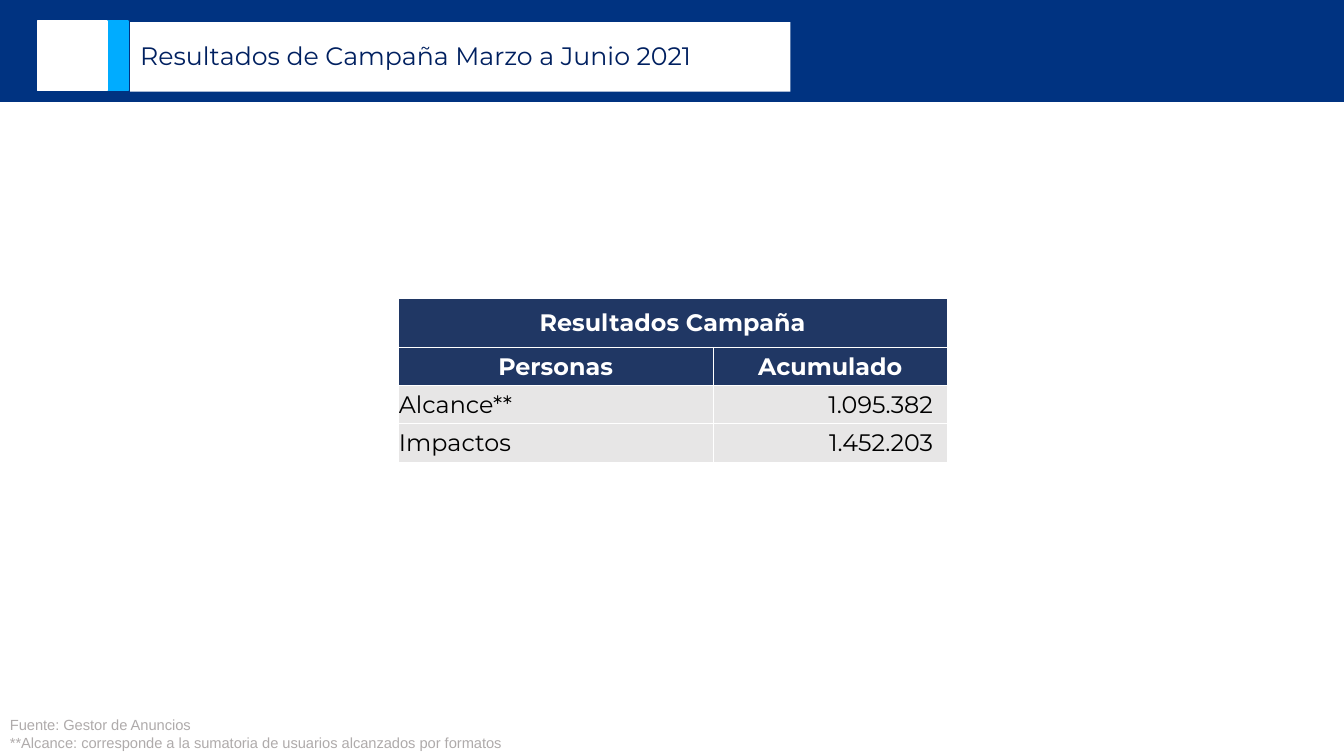
from dataclasses import dataclass
from typing import Any

from lxml.etree import SubElement
from pptx import Presentation
from pptx.dml.color import RGBColor
from pptx.enum.shapes import MSO_SHAPE as Shape
from pptx.enum.text import MSO_ANCHOR as Anchor, MSO_AUTO_SIZE as AutoSize, PP_ALIGN as Align
from pptx.oxml.ns import qn
from pptx.util import Emu, Inches, Pt

COLOURS = {
    "band": "003381", "accent": "00ACFF", "white": "FFFFFF", "title": "002060",
    "header": "203764", "body": "E7E6E6", "black": "000000", "note": "AFABAB",
}
SLIDE_WIDTH, SLIDE_HEIGHT = Inches(13.33), Inches(7.5)


@dataclass(frozen=True)
class Area:
    """Place and size, in percent of the slide's width and height."""
    left: float
    top: float
    width: float
    height: float


@dataclass(frozen=True)
class Block:
    kind: Shape
    area: Area
    colour: str


@dataclass(frozen=True)
class TableCell:
    row: int
    column: int
    text: str
    style: str
    align: Align
    margins: tuple[float, float, float, float] = (0.01, 0.01, 0.01, 0)


BLOCKS = [
    Block(Shape.FLOWCHART_PROCESS, Area(0, 0, 100, 13.47), "band"),
    Block(Shape.RECTANGLE, Area(8.03, 2.8, 1.5, 9.2), "accent"),
    Block(Shape.RECTANGLE, Area(2.78, 2.8, 5.18, 9.2), "white"),
]
TITLE_AREA = Area(9.68, 2.93, 49.13, 9.2)
NOTE_AREA = Area(0, 94, 49.2, 6)
NOTES = [
    "Fuente: Gestor de Anuncios",
    "**Alcance: corresponde a la sumatoria de usuarios alcanzados por formatos",
]
COLUMNS = [23.48, 17.4]
ROWS = [6.27, 5.07, 5.07, 5.07]
TABLE_AREA = Area(29.6, 39.4, sum(COLUMNS), sum(ROWS))
NUMBER_MARGINS = (0.01, 0.01, 0.14, 0)
CELLS = [
    TableCell(0, 0, "Resultados Campaña", "header", Align.CENTER, (0.19, 0.1, 0.19, 0.1)),
    TableCell(1, 0, "Personas", "header", Align.CENTER),
    TableCell(1, 1, "Acumulado", "header", Align.CENTER),
    TableCell(2, 0, "Alcance**", "body", Align.LEFT),
    TableCell(2, 1, "1.095.382", "body", Align.RIGHT, NUMBER_MARGINS),
    TableCell(3, 0, "Impactos", "body", Align.LEFT),
    TableCell(3, 1, "1.452.203", "body", Align.RIGHT, NUMBER_MARGINS),
]
FONTS = {
    "title": {"name": "Montserrat", "size": Pt(18), "bold": False},
    "header": {"name": "Montserrat", "size": Pt(17), "bold": True},
    "body": {"name": "Montserrat", "size": Pt(17), "bold": False},
    "note": {"name": "Arial", "size": Pt(10.5), "bold": False},
}


def colour(name: str) -> RGBColor:
    return RGBColor.from_string(COLOURS[name])


def across(share: float) -> Emu:
    return Emu(round(SLIDE_WIDTH * share / 100))


def down(share: float) -> Emu:
    return Emu(round(SLIDE_HEIGHT * share / 100))


def place(area: Area) -> tuple[Emu, Emu, Emu, Emu]:
    return across(area.left), down(area.top), across(area.width), down(area.height)


def set_values(target: Any, values: dict[str, Any]) -> None:
    for name, value in values.items():
        setattr(target, name, value)


def paint(target: Any, name: str) -> None:
    target.fill.solid()
    target.fill.fore_color.rgb = colour(name)


def write(para: Any, text: str, style: str, ink: str) -> None:
    span = para.add_run()
    span.text = text
    set_values(span.font, FONTS[style])
    span.font.color.rgb = colour(ink)


def draw_block(page: Any, block: Block) -> None:
    box = page.shapes.add_shape(block.kind, *place(block.area))
    box.shadow.inherit = False
    paint(box, block.colour)
    box.line.color.rgb = colour(block.colour)
    box.line.width = Pt(1)


def draw_title(page: Any, text: str) -> None:
    title = page.shapes.title
    set_values(title, dict(zip(("left", "top", "width", "height"), place(TITLE_AREA))))
    paint(title, "white")
    set_values(title.text_frame, {
        "word_wrap": True, "auto_size": AutoSize.NONE, "vertical_anchor": Anchor.MIDDLE,
    })
    para = title.text_frame.paragraphs[0]
    set_values(para, {"alignment": Align.LEFT, "line_spacing": 0.9, "space_before": Pt(0)})
    write(para, text, "title", "title")
    # Bring the title in front of the band
    title.element.getparent().append(title.element)


def draw_notes(page: Any) -> None:
    frame = page.shapes.add_textbox(*place(NOTE_AREA)).text_frame
    set_values(frame, {"word_wrap": True, "vertical_anchor": Anchor.BOTTOM})
    for index, text in enumerate(NOTES):
        para = frame.add_paragraph() if index else frame.paragraphs[0]
        write(para, text, "note", "note")


def add_borders(cell: Any) -> None:
    properties = cell._tc.get_or_add_tcPr()
    for position, side in enumerate(("lnL", "lnR", "lnT", "lnB")):
        line = properties.makeelement(qn(f"a:{side}"), {"w": str(Pt(0.5))})
        fill = SubElement(line, qn("a:solidFill"))
        SubElement(fill, qn("a:srgbClr"), val=COLOURS["white"])
        properties.insert(position, line)


def draw_table(page: Any) -> None:
    table = page.shapes.add_table(len(ROWS), len(COLUMNS), *place(TABLE_AREA)).table
    for column, share in zip(table.columns, COLUMNS):
        column.width = across(share)
    for row, share in zip(table.rows, ROWS):
        row.height = down(share)
    table.cell(0, 0).merge(table.cell(0, 1))
    for item in CELLS:
        cell = table.cell(item.row, item.column)
        sides = ("margin_left", "margin_top", "margin_right", "margin_bottom")
        set_values(cell, dict(zip(sides, map(Inches, item.margins))))
        cell.vertical_anchor = Anchor.MIDDLE
        paint(cell, item.style)
        para = cell.text_frame.paragraphs[0]
        para.alignment = item.align
        write(para, item.text, item.style, "white" if item.style == "header" else "black")
    for cell in table.iter_cells():
        add_borders(cell)


def main() -> None:
    deck = Presentation()
    set_values(deck, {"slide_width": SLIDE_WIDTH, "slide_height": SLIDE_HEIGHT})
    page = deck.slides.add_slide(deck.slide_layouts[5])
    # Header band and title
    for block in BLOCKS:
        draw_block(page, block)
    draw_title(page, "Resultados de Campaña Marzo a Junio 2021")
    # Results and source notes
    draw_table(page)
    draw_notes(page)
    deck.save("out.pptx")


if __name__ == "__main__":
    main()
